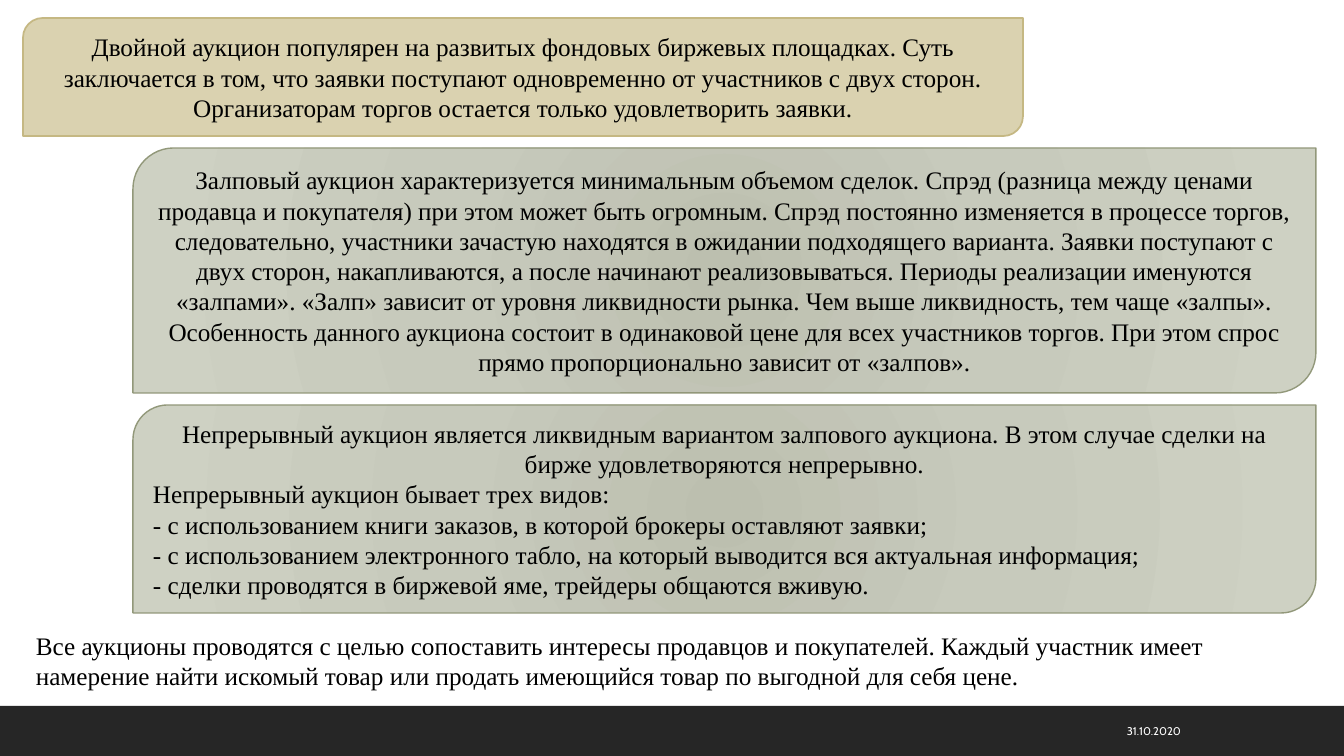
from pptx import Presentation
from pptx.dml.color import RGBColor
from pptx.enum.shapes import MSO_SHAPE
from pptx.enum.text import MSO_ANCHOR, PP_ALIGN
from pptx.oxml import parse_xml
from pptx.oxml.ns import nsdecls, qn
from pptx.util import Pt

EMU_PER_PX = 914400 / 100.8
RECT, ROUNDED = MSO_SHAPE.RECTANGLE, MSO_SHAPE.ROUND_2_DIAG_RECTANGLE
LEFT, CENTER, RIGHT = PP_ALIGN.LEFT, PP_ALIGN.CENTER, PP_ALIGN.RIGHT
TOP, MIDDLE = MSO_ANCHOR.TOP, MSO_ANCHOR.MIDDLE
SAGE = [(0, "BCBFAF"), (45, "C7CABC"), (100, "CED1C3")]

DOUBLE = "Двойной аукцион популярен на развитых фондовых биржевых площадках. Суть заключается в том, что заявки поступают одновременно от участников с двух сторон. Организаторам торгов остается только удовлетворить заявки."
VOLLEY = "Залповый аукцион характеризуется минимальным объемом сделок. Спрэд (разница между ценами продавца и покупателя) при этом может быть огромным. Спрэд постоянно изменяется в процессе торгов, следовательно, участники зачастую находятся в ожидании подходящего варианта. Заявки поступают с двух сторон, накапливаются, а после начинают реализовываться. Периоды реализации именуются «залпами». «Залп» зависит от уровня ликвидности рынка. Чем выше ликвидность, тем чаще «залпы». Особенность данного аукциона состоит в одинаковой цене для всех участников торгов. При этом спрос прямо пропорционально зависит от «залпов»."
CONTINUOUS = "Непрерывный аукцион является ликвидным вариантом залпового аукциона. В этом случае сделки на бирже удовлетворяются непрерывно."
KINDS = [
    "Непрерывный аукцион бывает трех видов:",
    "- с использованием книги заказов, в которой брокеры оставляют заявки;",
    "- с использованием электронного табло, на который выводится вся актуальная информация;",
    "- сделки проводятся в биржевой яме, трейдеры общаются вживую.",
]
SUMMARY = "Все аукционы проводятся с целью сопоставить интересы продавцов и покупателей. Каждый участник имеет намерение найти искомый товар или продать имеющийся товар по выгодной для себя цене."


def px(n):
    return round(n * EMU_PER_PX)


def rgb(color):
    return RGBColor.from_string(color)


def write(p, text, font="Times New Roman", size=18, color="000000", align=LEFT):
    p.alignment = align
    r = p.add_run()
    r.text = text
    r.font.name = font
    r.font.size = Pt(size)
    r.font.color.rgb = rgb(color)


class Deck:
    def __init__(self, width, height):
        self.prs = Presentation()
        self.prs.slide_width, self.prs.slide_height = px(width), px(height)
        self.slide = self.prs.slides.add_slide(self.prs.slide_layouts[6])

    def shape(self, kind, box, fill, line=None, width=1):
        s = self.slide.shapes.add_shape(kind, *map(px, box))
        s.shadow.inherit = False
        s.fill.solid()
        if isinstance(fill, str):
            s.fill.fore_color.rgb = rgb(fill)
        else:
            self.radial(s, fill)
        if line:
            s.line.color.rgb = rgb(line)
            s.line.width = Pt(width)
        else:
            s.line.fill.background()
        return s

    def radial(self, s, stops):
        gs = "".join(
            f'<a:gs pos="{pos * 1000}"><a:srgbClr val="{color}"/></a:gs>'
            for pos, color in stops
        )
        grad = parse_xml(
            f'<a:gradFill {nsdecls("a")} rotWithShape="1"><a:gsLst>{gs}</a:gsLst>'
            '<a:path path="circle"><a:fillToRect l="100000" t="100000" '
            'r="100000" b="100000"/></a:path></a:gradFill>'
        )
        spPr = s._element.spPr
        spPr.replace(spPr.find(qn("a:solidFill")), grad)

    def panel(self, box, centered, fill, line, width=1, listed=()):
        tf = self.shape(ROUNDED, box, fill, line, width).text_frame
        tf.word_wrap = True
        tf.vertical_anchor = MIDDLE
        write(tf.paragraphs[0], centered, align=CENTER)
        for text in listed:
            write(tf.add_paragraph(), text)

    def text(self, box, text, anchor=TOP, **style):
        tf = self.slide.shapes.add_textbox(*map(px, box)).text_frame
        tf.word_wrap = True
        tf.vertical_anchor = anchor
        write(tf.paragraphs[0], text, **style)


def main():
    deck = Deck(1344, 756)
    deck.shape(RECT, (0, 706, 1344, 50), "262626")
    deck.text((906, 711, 285, 40), "31.10.2020", anchor=MIDDLE,
              font="Cabin", size=8, color="FFFFFF", align=RIGHT)
    deck.panel((23, 18, 1000, 118), DOUBLE, "DAD2B0", "C5B883", 1.25)
    deck.panel((133, 148, 1183, 245), VOLLEY, SAGE, "92987A")
    deck.panel((133, 405, 1183, 208), CONTINUOUS, SAGE, "92987A", listed=KINDS)
    deck.text((26, 625, 1292, 72), SUMMARY)
    deck.prs.save("out.pptx")


if __name__ == "__main__":
    main()
